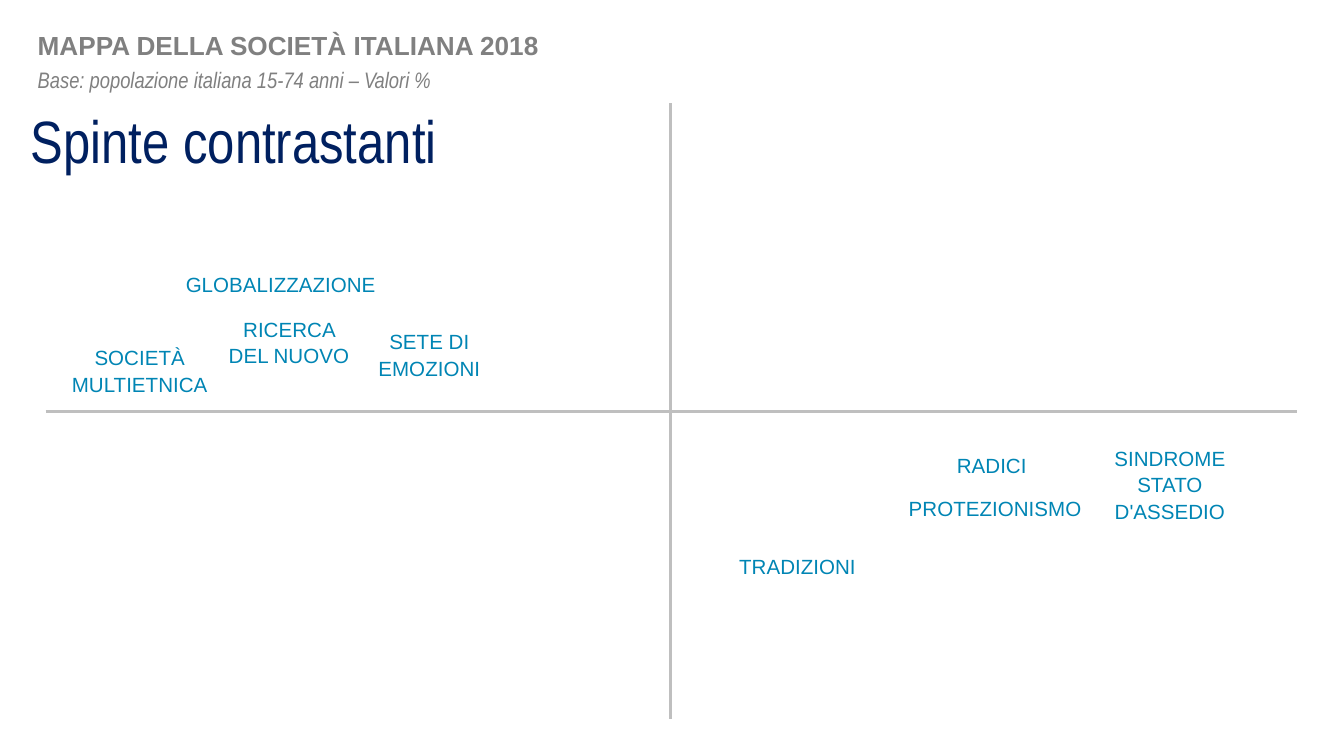
"""Build the slide of contrasting drives on the map of Italian society."""
from pptx import Presentation, util as u
from pptx.dml.color import RGBColor
from pptx.enum import shapes, text
from pptx.oxml import xmlchemy as xml

HUES = {"axis": "BFBFBF", "drive": "0085B4", "title": "002060", "note": "808080"}
DRIVE = {"size": u.Pt(11), "name": "Arial"}
HEAD = {"size": u.Pt(14), "name": "Arial", "bold": True}
BASE = {"size": u.Pt(12), "name": "Arial Narrow", "italic": True}
TITLE = {"size": u.Pt(32), "name": "Arial Narrow", "bold": False}


def write(box, words, hue, style, wrap=True, pad=(0, 0)):
    frame = box.text_frame
    side, edge = (u.Inches(gap) for gap in pad)
    form = {"auto_size": text.MSO_AUTO_SIZE.NONE, "word_wrap": wrap,
            "vertical_anchor": text.MSO_ANCHOR.TOP,
            "margin_left": side, "margin_right": side,
            "margin_top": edge, "margin_bottom": edge}
    for key, value in form.items():
        setattr(frame, key, value)
    par = frame.paragraphs[0]
    par.alignment = text.PP_ALIGN.LEFT
    run = par.add_run()
    run.text = words
    for key, value in style.items():
        setattr(run.font, key, value)
    run.font.color.rgb = RGBColor.from_string(HUES[hue])
    return par


deck = Presentation()
deck.slide_width = u.Inches(10)
deck.slide_height = deck.slide_width * 9 // 16
slide = deck.slides.add_slide(deck.slide_layouts[5])

for ends in [(4.99, 0.77, 4.99, 5.35), (0.34, 3.06, 9.65, 3.06)]:
    axis = slide.shapes.add_connector(shapes.MSO_CONNECTOR.STRAIGHT, *map(u.Inches, ends))
    axis.line.color.rgb = RGBColor.from_string(HUES["axis"])
    axis.line.width = u.Pt(1.5)
    axis._element.spPr.append(xml.OxmlElement("a:effectLst"))

drives = [
    ("RICERCA DEL NUOVO", (1.69, 2.35, 0.92, 0.3), True),
    ("SETE DI EMOZIONI", (2.73, 2.44, 0.93, 0.29), True),
    ("SOCIETÀ MULTIETNICA", (0.39, 2.56, 1.3, 0.24), True),
    ("GLOBALIZZAZIONE", (1.66, 2.01, 0.86, 0.17), False),
    ("TRADIZIONI", (5.62, 4.11, 0.63, 0.16), False),
    ("SINDROME STATO D'ASSEDIO", (8.24, 3.31, 0.93, 0.25), True),
    ("RADICI", (7.16, 3.36, 0.44, 0.15), False),
    ("PROTEZIONISMO", (6.97, 3.68, 0.87, 0.13), False),
]
for words, place, wrap in drives:
    box = slide.shapes.add_textbox(*map(u.Inches, place))
    par = write(box, words, "drive", DRIVE, wrap)
    par.alignment = text.PP_ALIGN.CENTER
    par.line_spacing = u.Pt(14)

title = slide.shapes.title
place = {"left": 0.23, "top": 0.77, "width": 3.05, "height": 1.08}
for key, value in place.items():
    setattr(title, key, u.Inches(value))
write(title, "Spinte contrastanti", "title", TITLE)

head = slide.shapes.add_textbox(*map(u.Inches, (0.28, 0.22, 3.81, 0.24)))
write(head, "MAPPA DELLA SOCIETÀ ITALIANA 2018", "note", HEAD, False)
base = slide.shapes.add_textbox(*map(u.Inches, (0.19, 0.45, 3.55, 0.28)))
write(base, "Base: popolazione italiana 15-74 anni – Valori %", "note", BASE, pad=(0.09, 0.04))

deck.save("out.pptx")
